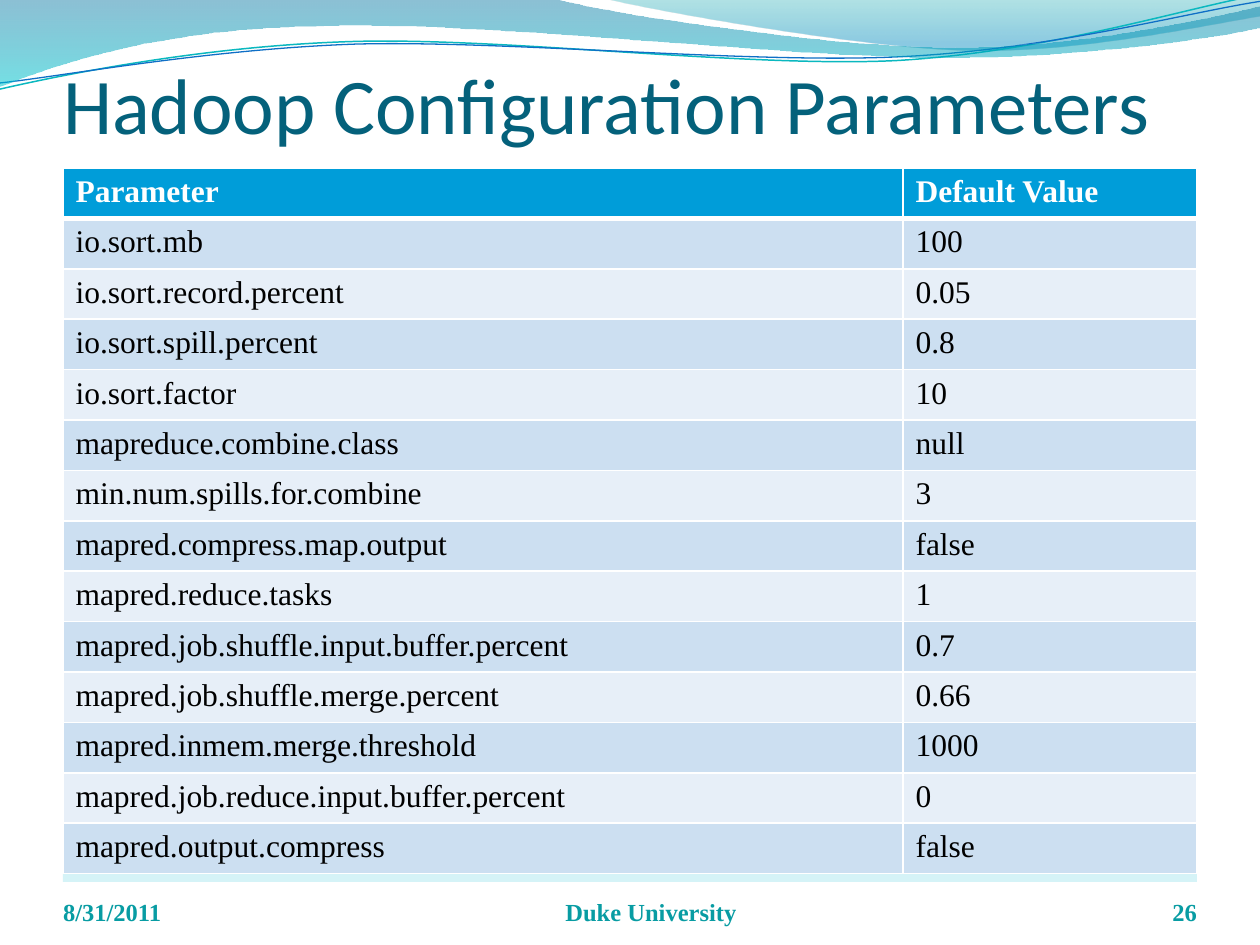
from math import cos, radians, sin

from lxml.etree import SubElement
from pptx import Presentation
from pptx.dml.color import RGBColor
from pptx.enum.shapes import MSO_SHAPE
from pptx.enum.text import MSO_ANCHOR, MSO_AUTO_SIZE, PP_ALIGN
from pptx.oxml.ns import qn
from pptx.util import Pt

THEME = {
    "title": {"name": "Calibri", "size": Pt(45), "bold": False, "color": "04617B"},
    "header": {"name": "Times New Roman", "size": Pt(18), "bold": True, "color": "FFFFFF"},
    "body": {"name": "Times New Roman", "size": Pt(18), "bold": False, "color": "000000"},
    "footer": {"name": "Times New Roman", "size": Pt(14), "bold": True, "color": "089CA3"},
    "header_fill": "009DD9",
    "bands": ("CCDFF1", "E7EFF8"),
    "border": "FFFFFF",
    "rule": ("B3EAF2", 55),
}

TITLE = "Hadoop Configuration Parameters"
PARAMETERS = [
    ("Parameter", "Default Value"),
    ("io.sort.mb", "100"),
    ("io.sort.record.percent", "0.05"),
    ("io.sort.spill.percent", "0.8"),
    ("io.sort.factor", "10"),
    ("mapreduce.combine.class", "null"),
    ("min.num.spills.for.combine", "3"),
    ("mapred.compress.map.output", "false"),
    ("mapred.reduce.tasks", "1"),
    ("mapred.job.shuffle.input.buffer.percent", "0.7"),
    ("mapred.job.shuffle.merge.percent", "0.66"),
    ("mapred.inmem.merge.threshold", "1000"),
    ("mapred.job.reduce.input.buffer.percent", "0"),
    ("mapred.output.compress", "false"),
]
FOOTERS = [
    ("8/31/2011", 36, 168, PP_ALIGN.LEFT),
    ("Duke University", 240, 264, PP_ALIGN.CENTER),
    ("26", 624, 60, PP_ALIGN.RIGHT),
]

WAVES = [
    {"start": (344.9, -0.7),
     "steps": [((366.5, 5), (491, 27.4), (553.7, 28.8)),
               ((616.3, 30.2), (691.9, 13.7), (720, 9.4)),
               ((720, 0),)],
     "gradient": [(0, "00A1A9", 30), (0.8, "008BBF", 45)]},
    {"start": (-0.7, 51.1),
     "steps": [((33.8, 43.2), (113.8, 26.6), (199.4, 23.8)),
               ((285.1, 20.9), (426.2, 38.9), (512.6, 34.6)),
               ((599, 29.5), (676.1, 5), (719.3, -2.9))],
     "line": ("0AB8BF", 0.85), "centre": (359.3, 25.2)},
    {"start": (-0.7, 47.5),
     "steps": [((33.8, 43.9), (118.1, 28.1), (203.8, 25.2)),
               ((290.2, 23), (429.8, 36.7), (515.5, 32.4)),
               ((601.9, 28.1), (678.2, 7.2), (720.7, 0.7))],
     "line": ("0F6FC6", 0.75), "centre": (359.6, 25.9)},
    {"start": (0, -0.7),
     "steps": [((316.8, -0.7),),
               ((342.7, 7.2), (478.1, 27.4), (545.8, 27.4)),
               ((614.2, 27.4), (689.8, 10.8), (720, 3.6)),
               ((720.7, 15.8),),
               ((707.8, 19.4), (626.4, 33.1), (537.1, 33.1)),
               ((447.8, 33.1), (275, 12.2), (185, 15.1)),
               ((92.9, 15.8), (33.1, 36.7), (-0.7, 49.7))],
     "gradient": [(0, "0074A1", 45), (1, "00C6CF", 55)]},
]
TILT = 2
MARGIN, TABLE_TOP, ROW_HEIGHT = 36, 96, 28.8
COLUMN_WIDTHS = (480, 168)


def rgb(code):
    return RGBColor.from_string(code)


def write(frame, text, style, align=PP_ALIGN.LEFT):
    paragraph = frame.paragraphs[0]
    paragraph.alignment = align
    run = paragraph.add_run()
    run.text = text
    for key, value in THEME[style].items():
        if key == "color":
            run.font.color.rgb = rgb(value)
        else:
            setattr(run.font, key, value)


def format_frame(frame, **values):
    plain = {"word_wrap": True, "auto_size": MSO_AUTO_SIZE.NONE, "margin_left": 0,
             "margin_right": 0, "margin_top": 0, "margin_bottom": 0}
    for key, value in {**plain, **values}.items():
        setattr(frame, key, value)


def set_opacity(shape, percents):
    colours = shape._element.spPr.iter(qn("a:srgbClr"))
    for colour, percent in zip(colours, percents):
        SubElement(colour, qn("a:alpha"), val=str(percent * 1000))


def level(point, centre):
    dx, dy = point[0] - centre[0], point[1] - centre[1]
    c, s = cos(radians(TILT)), sin(radians(TILT))
    return centre[0] + dx * c - dy * s, centre[1] + dx * s + dy * c


def bend(shape, steps):
    segments = iter(list(shape._element.spPr.iter(qn("a:lnTo"))))
    for step in steps:
        curve, *others = [next(segments) for _ in step]
        if others:
            curve.tag = qn("a:cubicBezTo")
        for other in others:
            curve.append(other[0])
            other.getparent().remove(other)


def add_wave(shapes, wave):
    points = [wave["start"], *(point for step in wave["steps"] for point in step)]
    if "centre" in wave:
        points = [level(point, wave["centre"]) for point in points]
    first, *rest = [(Pt(x), Pt(y)) for x, y in points]
    builder = shapes.build_freeform(*first)
    builder.add_line_segments(rest, close="gradient" in wave)
    shape = builder.convert_to_shape()
    bend(shape, wave["steps"])
    shape.shadow.inherit = False
    if "line" in wave:
        colour, width = wave["line"]
        shape.rotation = 360 - TILT
        shape.fill.background()
        shape.line.color.rgb = rgb(colour)
        shape.line.width = Pt(width)
        return
    shape.line.fill.background()
    shape.fill.gradient()
    shape.fill.gradient_angle = 270
    for stop, (position, colour, _) in zip(shape.fill.gradient_stops, wave["gradient"]):
        stop.position = position
        stop.color.rgb = rgb(colour)
    set_opacity(shape, [opacity for _, _, opacity in wave["gradient"]])


def add_borders(cell, bottom):
    properties = cell._tc.get_or_add_tcPr()
    for side, width in (("L", 1), ("R", 1), ("T", 1), ("B", bottom)):
        edge = SubElement(properties, qn(f"a:ln{side}"), w=str(Pt(width)))
        SubElement(SubElement(edge, qn("a:solidFill")), qn("a:srgbClr"), val=THEME["border"])


def add_parameters(shapes):
    table = shapes.add_table(len(PARAMETERS), len(COLUMN_WIDTHS), Pt(MARGIN), Pt(TABLE_TOP),
                             Pt(sum(COLUMN_WIDTHS)), Pt(ROW_HEIGHT * len(PARAMETERS))).table
    for column, width in zip(table.columns, COLUMN_WIDTHS):
        column.width = Pt(width)
    for r, values in enumerate(PARAMETERS):
        table.rows[r].height = Pt(ROW_HEIGHT)
        for c, value in enumerate(values):
            cell = table.cell(r, c)
            add_borders(cell, 1 if r else 3)
            cell.fill.solid()
            cell.fill.fore_color.rgb = rgb(THEME["bands"][(r - 1) % 2] if r else THEME["header_fill"])
            write(cell.text_frame, value, "body" if r else "header")


def main():
    deck = Presentation()
    deck.slide_width, deck.slide_height = Pt(720), Pt(540)
    slide = deck.slides.add_slide(deck.slide_layouts[5])
    shapes = slide.shapes

    rule = shapes.add_shape(MSO_SHAPE.RECTANGLE, Pt(MARGIN), Pt(498.2), Pt(648), Pt(5.8))
    rule.shadow.inherit = False
    rule.line.fill.background()
    rule.fill.solid()
    colour, opacity = THEME["rule"]
    rule.fill.fore_color.rgb = rgb(colour)
    set_opacity(rule, [opacity])

    for wave in WAVES:
        add_wave(shapes, wave)

    title = shapes.title
    title.left, title.top, title.width, title.height = Pt(MARGIN), Pt(24), Pt(648), Pt(66)
    format_frame(title.text_frame, margin_top=Pt(3.6), vertical_anchor=MSO_ANCHOR.MIDDLE)
    write(title.text_frame, TITLE, "title")
    shapes._spTree.append(title._element)

    add_parameters(shapes)

    for text, left, width, align in FOOTERS:
        footer = shapes.add_textbox(Pt(left), Pt(500.5), Pt(width), Pt(28.8)).text_frame
        format_frame(footer, vertical_anchor=MSO_ANCHOR.BOTTOM)
        write(footer, text, "footer", align)

    deck.save("out.pptx")


if __name__ == "__main__":
    main()
